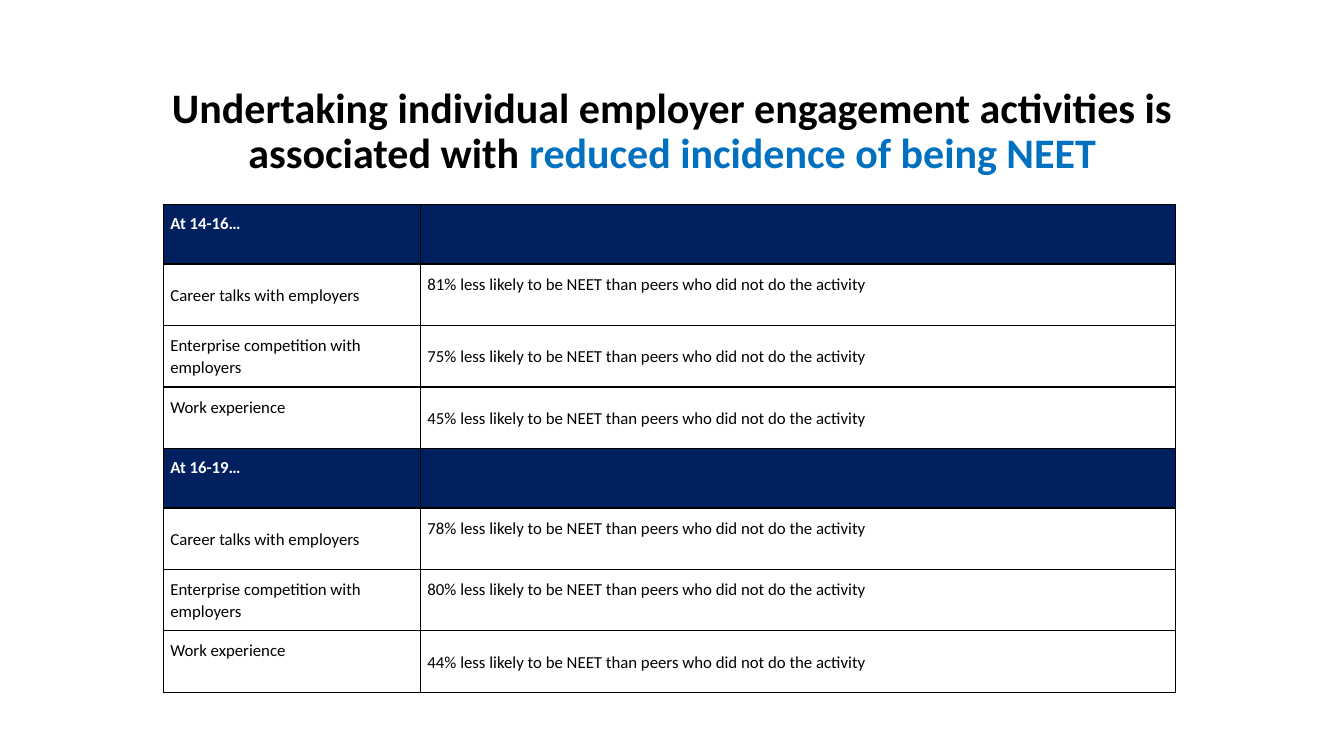
from lxml import etree
from pptx import Presentation
from pptx.dml.color import RGBColor
from pptx.enum.text import MSO_ANCHOR, PP_ALIGN
from pptx.oxml.ns import qn
from pptx.util import Inches, Pt

MIDDLE = MSO_ANCHOR.MIDDLE
CENTER = PP_ALIGN.CENTER
LEFT = PP_ALIGN.LEFT
FONT = "Calibri"
COLORS = {"black": "000000", "white": "FFFFFF", "navy": "002060", "blue": "0070C0"}
LINE_HEIGHT = 0.22
HEADER_HEIGHT = 0.59
ROW_HEIGHT = 0.61
COLUMN_WIDTHS = [2.55, 7.49]
OUTCOME = "{}% less likely to be NEET than peers who did not do the activity"
ACTIVITIES = [
    "Career talks with employers",
    "Enterprise competition with employers",
    "Work experience",
]
AGE_GROUPS = [("At 14-16…", [81, 75, 45]), ("At 16-19…", [78, 80, 44])]
RAISED_CELLS = {(0, 0), (1, 1), (3, 0), (4, 0), (5, 1), (6, 1), (7, 0)}


def add_borders(cell):
    properties = cell._tc.get_or_add_tcPr()
    for index, side in enumerate(["lnL", "lnR", "lnT", "lnB"]):
        line = etree.Element(qn("a:" + side), w=str(Pt(1)))
        fill = etree.SubElement(line, qn("a:solidFill"))
        etree.SubElement(fill, qn("a:srgbClr"), val=COLORS["black"])
        properties.insert(index, line)


presentation = Presentation()
presentation.slide_width = Inches(13.33)
presentation.slide_height = Inches(7.5)
slide = presentation.slides.add_slide(presentation.slide_layouts[5])

title = slide.shapes.title
title.left, title.top = Inches(0.92), Inches(0.71)
title.width, title.height = Inches(11.5), Inches(1.21)
title.text_frame.word_wrap = True
title.text_frame.vertical_anchor = MIDDLE
paragraph = title.text_frame.paragraphs[0]
paragraph.alignment = CENTER
paragraph.line_spacing = 0.9
for text, color in [
    ("Undertaking individual employer engagement activities is associated with ", "black"),
    ("reduced incidence of being NEET", "blue"),
]:
    run = paragraph.add_run()
    run.text = text
    run.font.color.rgb = RGBColor.from_string(COLORS[color])
paragraph.font.name = FONT
paragraph.font.size = Pt(30)
paragraph.font.bold = True

rows = []
for age, percentages in AGE_GROUPS:
    rows.append((age, ""))
    for activity, percentage in zip(ACTIVITIES, percentages):
        rows.append((activity, OUTCOME.format(percentage)))

table = slide.shapes.add_table(
    len(rows), 2, Inches(1.62), Inches(2.03), Inches(10.04), Inches(4.82)
).table
for column, width in zip(table.columns, COLUMN_WIDTHS):
    column.width = Inches(width)

for row_index, texts in enumerate(rows):
    is_header = texts[1] == ""
    table.rows[row_index].height = Inches(HEADER_HEIGHT if is_header else ROW_HEIGHT)
    for column_index, text in enumerate(texts):
        cell = table.cell(row_index, column_index)
        cell.fill.solid()
        cell.fill.fore_color.rgb = RGBColor.from_string(COLORS["navy" if is_header else "white"])
        add_borders(cell)
        cell.vertical_anchor = MIDDLE
        cell.margin_left = cell.margin_right = Inches(0.07)
        cell.margin_top = 0
        raised = (row_index, column_index) in RAISED_CELLS
        cell.margin_bottom = Inches(LINE_HEIGHT if raised else 0)
        cell.text = text
        paragraph = cell.text_frame.paragraphs[0]
        paragraph.alignment = LEFT
        paragraph.line_spacing = 1.07
        paragraph.font.name = FONT
        paragraph.font.size = Pt(12)
        paragraph.font.bold = is_header
        paragraph.font.color.rgb = RGBColor.from_string(COLORS["white" if is_header else "black"])

presentation.save("out.pptx")
